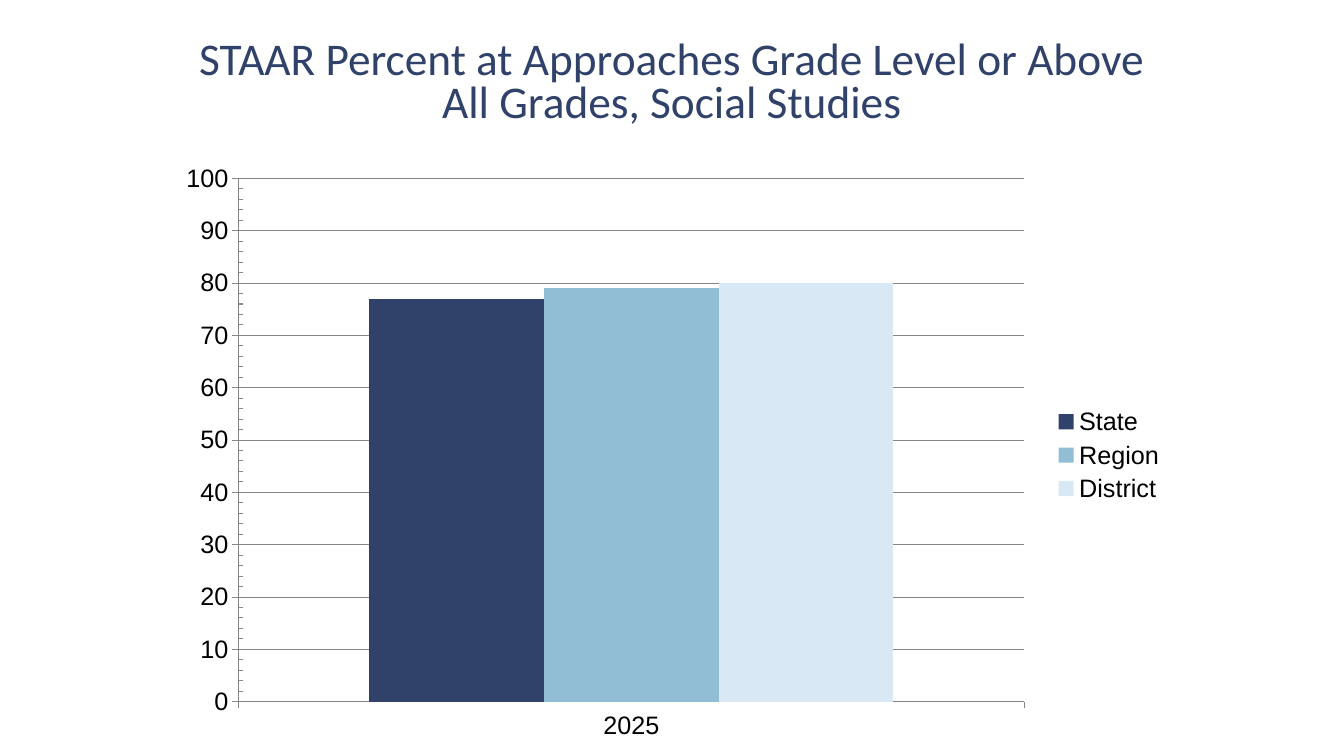
from lxml import etree
from pptx import Presentation
from pptx.chart.data import CategoryChartData
from pptx.dml.color import RGBColor
from pptx.enum.chart import XL_CHART_TYPE, XL_LEGEND_POSITION, XL_TICK_MARK
from pptx.enum.text import MSO_ANCHOR, PP_ALIGN
from pptx.oxml.ns import qn
from pptx.util import Cm, Pt

CLUSTERED = XL_CHART_TYPE.COLUMN_CLUSTERED
LEGEND_RIGHT = XL_LEGEND_POSITION.RIGHT
TICK_OUT, TICK_IN = XL_TICK_MARK.OUTSIDE, XL_TICK_MARK.INSIDE
MIDDLE, CENTER = MSO_ANCHOR.MIDDLE, PP_ALIGN.CENTER

COLORS = {
    "navy": "304269",
    "blue": "91BED4",
    "pale": "D9E8F5",
    "text": "000000",
    "axis": "868686",
}
TITLE = ["STAAR Percent at Approaches Grade Level or Above",
         "All Grades, Social Studies"]
YEARS = ["2025"]
RESULTS = [("State", [77], "navy"), ("Region", [79], "blue"), ("District", [80], "pale")]
LEFT, WIDTH = 4.23, 25.4


class Deck:
    """Slide style and the current slide."""

    def __init__(self, prs):
        self.slide = prs.slides.add_slide(prs.slide_layouts[6])

    def color(self, name):
        return RGBColor.from_string(COLORS[name])

    def font(self, font, name, size, color):
        font.name, font.size = name, Pt(size)
        font.color.rgb = self.color(color)

    def line(self, fmt):
        fmt.line.color.rgb = self.color("axis")
        fmt.line.width = Pt(0.75)

    def title(self, lines, x, y, w, h):
        tf = self.slide.shapes.add_textbox(Cm(x), Cm(y), Cm(w), Cm(h)).text_frame
        tf.word_wrap = True
        tf.vertical_anchor = MIDDLE
        tf.text = "\n".join(lines)
        for p in tf.paragraphs:
            p.alignment = CENTER
            p.line_spacing = 0.8
            for r in p.runs:
                self.font(r.font, "Calibri", 32.4, "navy")

    def column_chart(self, categories, series, x, y, w, h):
        data = CategoryChartData()
        data.categories = categories
        for name, values, _ in series:
            data.add_series(name, values)
        chart = self.slide.shapes.add_chart(
            CLUSTERED, Cm(x), Cm(y), Cm(w), Cm(h), data).chart
        chart.has_title = False
        self.font(chart.font, "Arial", 18, "text")
        chart.has_legend = True
        chart.legend.position = LEGEND_RIGHT
        chart.legend.include_in_layout = False

        plot = chart.plots[0]
        plot.gap_width, plot.overlap = 150, 0
        plot.vary_by_categories = False
        for s, (_, _, color) in zip(plot.series, series):
            s.format.fill.solid()
            s.format.fill.fore_color.rgb = self.color(color)

        axis = chart.value_axis
        axis.minimum_scale, axis.maximum_scale = 0, 100
        axis.major_unit, axis.minor_unit = 10, 2
        axis.minor_tick_mark = TICK_IN
        axis.has_major_gridlines = True
        self.line(axis.major_gridlines.format)
        for ax in (axis, chart.category_axis):
            ax.major_tick_mark = TICK_OUT
            self.line(ax.format)
        return chart

    def place_plot(self, chart, x, y, w, h):
        """Fix the inner plot area, in fractions of the chart."""
        area = chart.plots[0]._element.getparent()
        for old in area.findall(qn("c:layout")):
            area.remove(old)
        layout = etree.Element(qn("c:layout"))
        area.insert(0, layout)
        manual = etree.SubElement(layout, qn("c:manualLayout"))
        settings = [("layoutTarget", "inner"), ("xMode", "edge"), ("yMode", "edge"),
                    ("x", x), ("y", y), ("w", w), ("h", h)]
        for tag, value in settings:
            etree.SubElement(manual, qn(f"c:{tag}")).set("val", str(value))


def main():
    prs = Presentation()
    prs.slide_width, prs.slide_height = Cm(33.87), Cm(19.05)
    deck = Deck(prs)
    chart = deck.column_chart(YEARS, RESULTS, LEFT, 3.89, WIDTH, 15.16)
    deck.place_plot(chart, 0.07, 0.04, 0.78, 0.87)
    deck.title(TITLE, LEFT, 0.85, WIDTH, 2.54)
    prs.save("out.pptx")


if __name__ == "__main__":
    main()
